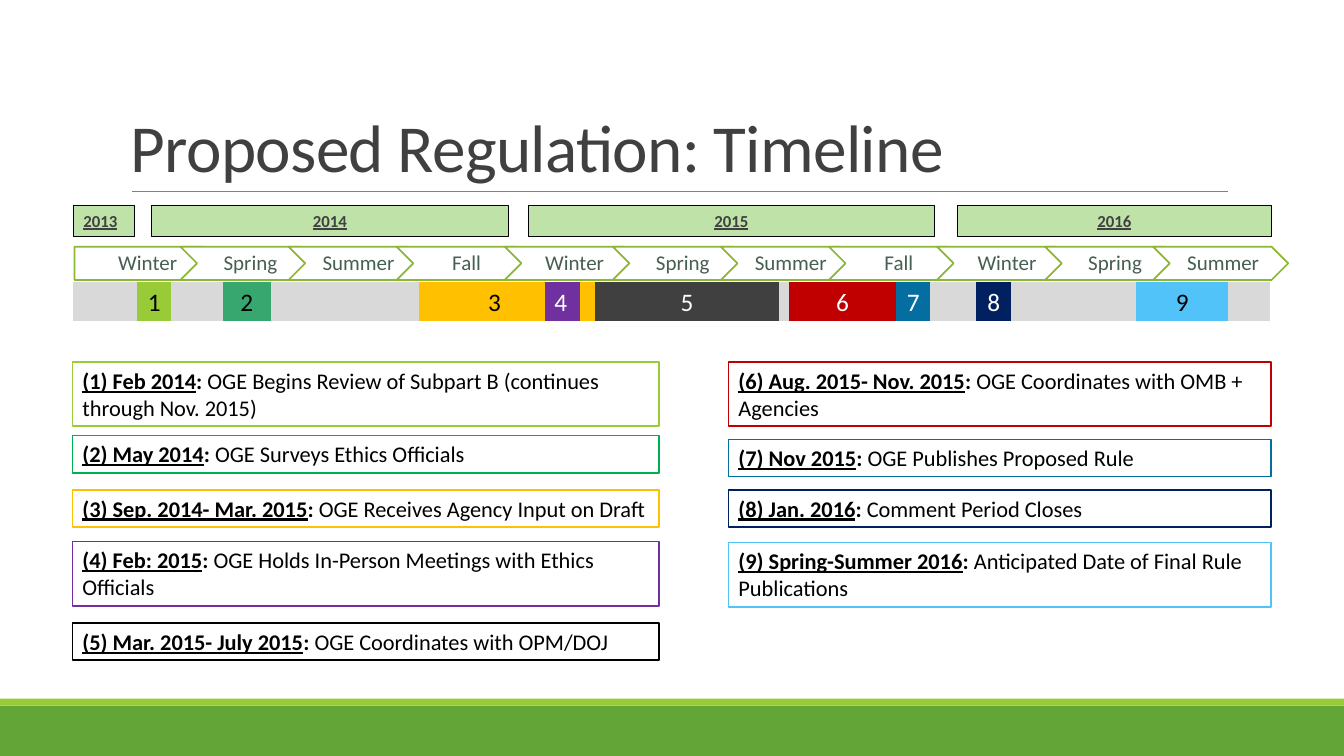
from lxml import etree
from pptx import Presentation
from pptx.dml.color import RGBColor
from pptx.enum.shapes import MSO_CONNECTOR, MSO_SHAPE
from pptx.enum.text import MSO_ANCHOR, PP_ALIGN
from pptx.oxml.ns import qn
from pptx.util import Pt

RECTANGLE, PENTAGON, CHEVRON = MSO_SHAPE.RECTANGLE, MSO_SHAPE.PENTAGON, MSO_SHAPE.CHEVRON
STRAIGHT = MSO_CONNECTOR.STRAIGHT
TOP, MIDDLE, BOTTOM = MSO_ANCHOR.TOP, MSO_ANCHOR.MIDDLE, MSO_ANCHOR.BOTTOM
LEFT, CENTER = PP_ALIGN.LEFT, PP_ALIGN.CENTER

FONT = "Calibri"
WHITE = RGBColor(0xFF, 0xFF, 0xFF)
BLACK = RGBColor(0x00, 0x00, 0x00)
CHARCOAL = RGBColor(0x40, 0x40, 0x40)
RULE_GRAY = RGBColor(0x80, 0x80, 0x80)
TRACK_GRAY = RGBColor(0xD9, 0xD9, 0xD9)
FOOTER_GREEN = RGBColor(0x63, 0xA5, 0x37)
LIME = RGBColor(0x99, 0xCB, 0x38)
ARROW_GREEN = RGBColor(0x8B, 0xB8, 0x33)
SEASON_TEXT = RGBColor(0x45, 0x5F, 0x51)
YEAR_GREEN = RGBColor(0xBF, 0xE2, 0xA8)
SEA_GREEN = RGBColor(0x37, 0xA7, 0x6F)
GREEN = RGBColor(0x00, 0xB0, 0x50)
AMBER = RGBColor(0xFF, 0xC0, 0x00)
PURPLE = RGBColor(0x70, 0x30, 0xA0)
RED = RGBColor(0xC0, 0x00, 0x00)
BLUE = RGBColor(0x05, 0x6E, 0xA0)
NAVY = RGBColor(0x00, 0x20, 0x60)
SKY = RGBColor(0x51, 0xC3, 0xF9)

# Each year: left, width, alignment
YEARS = [("2013", 0, 43.5, LEFT), ("2014", 56, 254.5, CENTER),
         ("2015", 325, 290, CENTER), ("2016", 631.5, 224, CENTER)]
SEASONS = ["Winter", "Spring", "Summer", "Fall"]
SEASON_COUNT = 11
# Each phase: start, end, bar colour, number colour, shift of the number
PHASES = [(45.5, 70, LIME, BLACK, 0), (106.5, 141, SEA_GREEN, BLACK, 0),
          (247, 372.5, AMBER, BLACK, -9), (336.5, 361.5, PURPLE, WHITE, -1),
          (372.5, 504, CHARCOAL, WHITE, 0), (511, 587.5, RED, WHITE, 0),
          (587.5, 612, BLUE, WHITE, 0), (645, 669.5, NAVY, WHITE, 0),
          (759, 825, SKY, BLACK, 0)]
# Each note: top, height, outline, date, description
ONE_LINE, TWO_LINES = 26.6, 46
LEFT_NOTES = [
    (0, TWO_LINES, LIME, "(1) Feb 2014",
     "OGE Begins Review of Subpart B (continues through Nov. 2015)"),
    (52.7, ONE_LINE, GREEN, "(2) May 2014", "OGE Surveys Ethics Officials"),
    (91.4, ONE_LINE, AMBER, "(3) Sep. 2014- Mar. 2015", "OGE Receives Agency Input on Draft"),
    (128.2, TWO_LINES, PURPLE, "(4) Feb: 2015",
     "OGE Holds In-Person Meetings with Ethics Officials"),
    (186.5, ONE_LINE, BLACK, "(5) Mar. 2015- July 2015", "OGE Coordinates with OPM/DOJ")]
RIGHT_NOTES = [
    (0, TWO_LINES, RED, "(6) Aug. 2015- Nov. 2015", "OGE Coordinates with OMB + Agencies"),
    (55.4, ONE_LINE, BLUE, "(7) Nov 2015", "OGE Publishes Proposed Rule"),
    (91.4, ONE_LINE, NAVY, "(8) Jan. 2016", "Comment Period Closes"),
    (129, TWO_LINES, SKY, "(9) Spring-Summer 2016",
     "Anticipated Date of Final Rule Publications")]


def add_box(page, kind, left, top, width, height, fill, outline=None, weight=1.25):
    box = page.shapes.add_shape(kind, Pt(left), Pt(top), Pt(width), Pt(height))
    box.shadow.inherit = False
    box.fill.solid()
    box.fill.fore_color.rgb = fill
    if outline is None:
        box.line.fill.background()
    else:
        box.line.color.rgb = outline
        box.line.width = Pt(weight)
    return box


def add_line(page, start, end, y, color, weight):
    line = page.shapes.add_connector(STRAIGHT, Pt(start), Pt(y), Pt(end), Pt(y))
    line.line.color.rgb = color
    line.line.width = Pt(weight)
    etree.SubElement(line._element.spPr, qn("a:effectLst"))


def write(box, parts, size, color, align=LEFT, anchor=TOP):
    """Fill a box with spans given as (text, bold, underline)."""
    frame = box.text_frame
    frame.word_wrap = True
    frame.vertical_anchor = anchor
    para = frame.paragraphs[0]
    para.alignment = align
    for text, bold, underline in parts:
        span = para.add_run()
        span.text = text
        span.font.name = FONT
        span.font.size = Pt(size)
        span.font.color.rgb = color
        span.font.bold = bold
        span.font.underline = underline
    return para


def add_label(page, text, left, top, width, height, size, color, align=LEFT, anchor=TOP):
    box = page.shapes.add_textbox(Pt(left), Pt(top), Pt(width), Pt(height))
    return box, write(box, [(text, False, False)], size, color, align, anchor)


def add_footer(page, top, width, height):
    stripe = 5
    add_box(page, RECTANGLE, 0, top + stripe, width, height - stripe, FOOTER_GREEN)
    add_box(page, RECTANGLE, 0, top, width, stripe, LIME)


def add_title(page, left, top, width, height):
    add_line(page, left + 8, left + width - 1, top + height, RULE_GRAY, 0.5)
    box, para = add_label(page, "Proposed Regulation: Timeline", left, top, width, height,
                          48, CHARCOAL, anchor=BOTTOM)
    para.line_spacing = 0.85
    para.runs[0].font._element.set("spc", "-50")


def add_years(page, left, top, height):
    for year, offset, width, align in YEARS:
        box = add_box(page, RECTANGLE, left + offset, top, width, height,
                      YEAR_GREEN, BLACK, 0.75)
        write(box, [(year, True, True)], 12, CHARCOAL, align)


def add_seasons(page, left, top, height):
    first_step, step, chevron_width = 75.6, 77.2, 96.5
    for index in range(SEASON_COUNT):
        if index == 0:
            kind, x, width = PENTAGON, left, 105
            label_left, label_width = left, 99.4
        else:
            kind, x, width = CHEVRON, left + first_step + (index - 1) * step, chevron_width
            label_left, label_width = x + 12, 72.5
        add_box(page, kind, x, top, width, height, WHITE, ARROW_GREEN)
        box, para = add_label(page, SEASONS[index % len(SEASONS)], label_left, top,
                              label_width, height, 15, SEASON_TEXT, CENTER, MIDDLE)
        frame = box.text_frame
        frame.margin_left = Pt(6.5 if index == 0 else 5)
        frame.margin_right = Pt(1.5)
        frame.margin_top = frame.margin_bottom = Pt(3)
        para.line_spacing = 0.9


def add_phases(page, left, top, width, height):
    middle = top + height / 2
    add_line(page, left, left + width, middle, TRACK_GRAY, height)
    for start, end, color, _, _ in PHASES:
        add_line(page, left + start, left + end, middle, color, height)
    number_width = 24
    for number, (start, end, _, color, shift) in enumerate(PHASES, 1):
        center = left + (start + end) / 2 + shift
        add_label(page, str(number), center - number_width / 2, top - 0.3,
                  number_width, 29, 18, color, CENTER)


def add_notes(page, left, top, width, notes):
    for offset, height, outline, date, description in notes:
        box = add_box(page, RECTANGLE, left, top + offset, width, height, WHITE, outline)
        write(box, [(date, True, True), (": ", True, False), (description, False, False)],
              16, BLACK)


def main():
    deck = Presentation()
    deck.slide_width, deck.slide_height = Pt(960), Pt(540)
    page = deck.slides.add_slide(deck.slide_layouts[6])
    add_footer(page, 499, 960, 41)
    add_title(page, 86.4, 22.3, 792, 114.5)
    # Timeline
    add_seasons(page, 53.3, 176.2, 23.8)
    add_years(page, 52.5, 146.9, 21.8)
    add_phases(page, 52.5, 201.1, 855, 28.25)
    # Milestone notes
    add_notes(page, 51.8, 258.5, 419, LEFT_NOTES)
    add_notes(page, 520.4, 258.5, 387.3, RIGHT_NOTES)
    deck.save("out.pptx")


if __name__ == "__main__":
    main()
